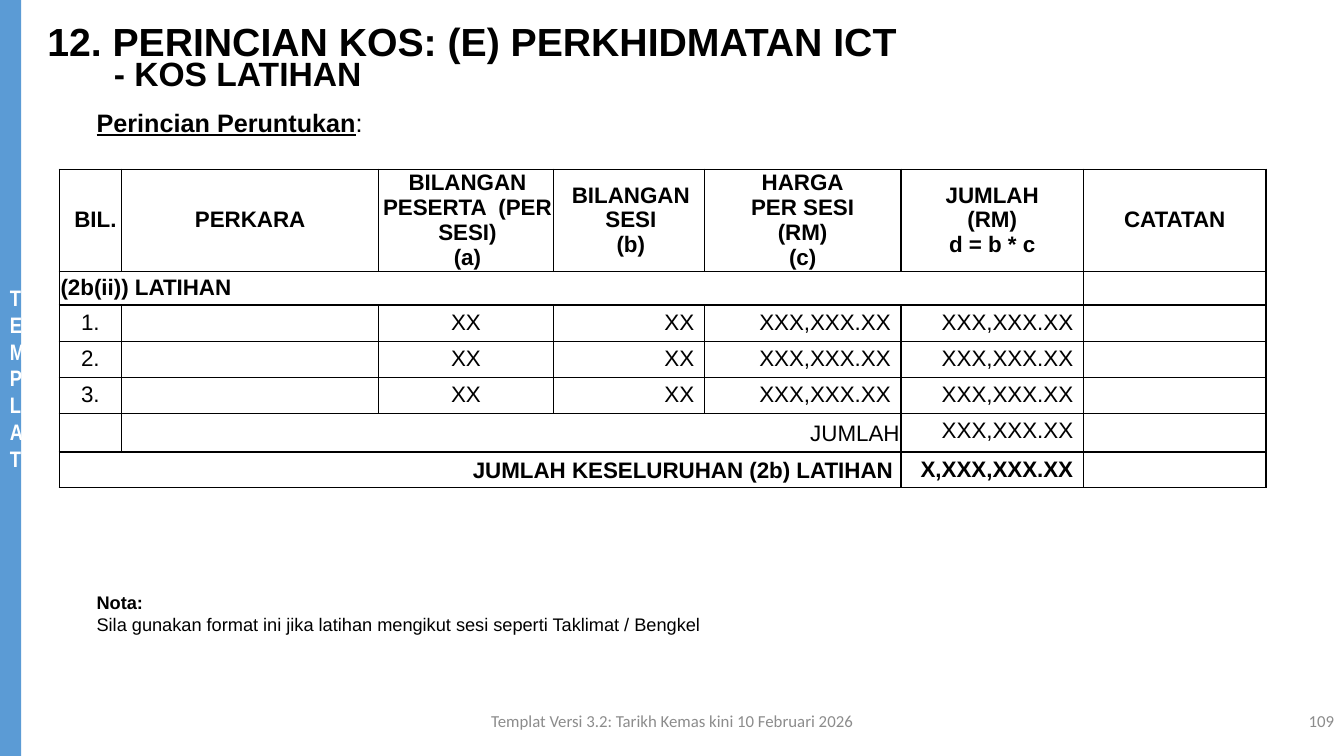
from lxml import etree
from pptx import Presentation
from pptx import util as u
from pptx.dml.color import RGBColor
from pptx.enum import shapes, text
from pptx.oxml import ns

HUES = {"bar": "5B9BD5", "ink": "000000", "pale": "FFFFFF", "grey": "8C8C8C"}
ALIGN = {"l": text.PP_ALIGN.LEFT, "c": text.PP_ALIGN.CENTER,
         "r": text.PP_ALIGN.RIGHT, "j": text.PP_ALIGN.JUSTIFY}
MID, TOP = text.MSO_ANCHOR.MIDDLE, text.MSO_ANCHOR.TOP
TIGHT, ROOMY = (1, 1, 1, 0), (7.2, 3.6, 7.2, 3.6)


def write(para, words, size=16, font="Arial", hue="ink", bold=False,
          under=False, align="l", line=None):
    para.alignment = ALIGN[align]
    if line:
        para.line_spacing = u.Pt(line)
    run = para.add_run()
    run.text = words
    run.font.size, run.font.name = u.Pt(size), font
    run.font.bold, run.font.underline = bold, under
    run.font.color.rgb = RGBColor.from_string(HUES[hue])


def fill(frame, words, **look):
    for i, part in enumerate(words.split("\n")):
        write(frame.add_paragraph() if i else frame.paragraphs[0], part, **look)


class Deck:
    def __init__(self):
        self.prs = Presentation()
        self.prs.slide_width, self.prs.slide_height = u.Inches(13.33), u.Inches(7.5)
        self.slide = self.prs.slides.add_slide(self.prs.slide_layouts[6])

    def wide(self, share):
        return int(self.prs.slide_width * share / 100)

    def high(self, share):
        return int(self.prs.slide_height * share / 100)

    def area(self, x, y, w, h):
        return self.wide(x), self.high(y), self.wide(w), self.high(h)

    def bar(self, words, *place):
        box = self.slide.shapes.add_shape(shapes.MSO_SHAPE.RECTANGLE, *self.area(*place))
        box.shadow.inherit = False
        box.fill.solid()
        box.fill.fore_color.rgb = RGBColor.from_string(HUES["bar"])
        box.line.fill.background()
        box.text_frame.word_wrap = True
        box.text_frame.vertical_anchor = MID
        write(box.text_frame.paragraphs[0], words, font="Arial Narrow",
              hue="pale", bold=True, align="c")

    def label(self, *place, words="", anchor=TOP, **look):
        frame = self.slide.shapes.add_textbox(*self.area(*place)).text_frame
        frame.word_wrap = True
        frame.vertical_anchor = anchor
        if words:
            fill(frame, words, **look)
        return frame

    def grid(self, x, y, cols, rows):
        frame = self.slide.shapes.add_table(
            len(rows), len(cols), *self.area(x, y, sum(cols), sum(rows)))
        table = frame.table
        table.first_row = table.horz_banding = False
        for col, share in zip(table.columns, cols):
            col.width = self.wide(share)
        for row, share in zip(table.rows, rows):
            row.height = self.high(share)
        for cell in table.iter_cells():
            self.edge(cell)
            cell.fill.background()
            self.pad(cell, TIGHT)
        return table

    def edge(self, cell):
        props = cell._tc.get_or_add_tcPr()
        for side in ("lnL", "lnR", "lnT", "lnB"):
            line = etree.SubElement(props, ns.qn("a:" + side), w=str(u.Pt(1)))
            paint = etree.SubElement(line, ns.qn("a:solidFill"))
            etree.SubElement(paint, ns.qn("a:srgbClr"), val=HUES["ink"])

    def pad(self, cell, sides):
        (cell.margin_left, cell.margin_top,
         cell.margin_right, cell.margin_bottom) = map(u.Pt, sides)

    def cell(self, table, row, col, words, span=1, anchor=MID, pad=TIGHT, **look):
        cell = table.cell(row, col)
        if span > 1:
            cell.merge(table.cell(row, col + span - 1))
        cell.vertical_anchor = anchor
        self.pad(cell, pad)
        fill(cell.text_frame, words, **look)


def main():
    deck = Deck()
    deck.bar("TEMPLAT", 0, 0, 1.58, 100)

    cost = deck.grid(4.4, 22.4, (4.65, 19.13, 12.98, 11.25, 14.63, 13.58, 13.58),
                     (13.47, 4.47, 4.8, 4.8, 4.8, 5.07, 4.67))
    heads = (("BIL.", 7.2), ("PERKARA", 0),
             ("BILANGAN PESERTA  (PER SESI)\n(a)", 2.2),
             ("BILANGAN SESI\n(b)", 3), ("HARGA\nPER SESI\n(RM)\n(c)", 0),
             ("JUMLAH\n(RM)\nd = b * c", 0), ("CATATAN", 0))
    for col, (head, left) in enumerate(heads):
        deck.cell(cost, 0, col, head, pad=(left, 0, 0, 0), bold=True, align="c")
    deck.cell(cost, 1, 0, "(2b(ii)) LATIHAN", span=6, bold=True, line=15.7)

    sum_look = {"anchor": TOP, "pad": ROOMY, "align": "r"}
    price = "XXX,XXX.XX"
    for num in (1, 2, 3):
        row = num + 1
        deck.cell(cost, row, 0, f"{num}.", align="c", line=15.7)
        deck.cell(cost, row, 2, "XX", anchor=TOP, pad=ROOMY, align="c")
        for col, item in enumerate(("XX", price, price), 3):
            deck.cell(cost, row, col, item, **sum_look)
    deck.cell(cost, 5, 1, "JUMLAH", span=4, align="r")
    deck.cell(cost, 5, 5, price, **sum_look)
    deck.cell(cost, 6, 0, "JUMLAH KESELURUHAN (2b) LATIHAN", span=5,
              pad=(1, 1, 5.5, 0), bold=True, align="r")
    deck.cell(cost, 6, 5, "X,XXX,XXX.XX", bold=True, **sum_look)

    note = deck.label(6.45, 77.6, 85.4, 7.2)
    write(note.paragraphs[0], "Nota:", size=13, bold=True)
    write(note.add_paragraph(),
          "Sila gunakan format ini jika latihan mengikut sesi seperti Taklimat / Bengkel",
          size=13)
    lead = deck.label(6.45, 13.5, 62.6, 5.33).paragraphs[0]
    write(lead, "Perincian Peruntukan", size=18, bold=True, under=True, align="j")
    write(lead, ":", size=18, align="j")

    deck.label(7.73, 6.4, 86.5, 10.67, words="- KOS LATIHAN", size=24, bold=True)
    deck.label(2.78, 1.6, 86.5, 7.2, words="12. PERINCIAN KOS: (E) PERKHIDMATAN ICT",
               size=28, bold=True)
    foot = {"anchor": MID, "size": 12, "font": "Calibri", "hue": "grey"}
    deck.label(77.5, 92.67, 22.5, 5.33, words="109", align="r", **foot)
    deck.label(33.15, 92.67, 33.75, 5.33, align="c",
               words="Templat Versi 3.2: Tarikh Kemas kini 10 Februari 2026", **foot)
    deck.prs.save("out.pptx")


if __name__ == "__main__":
    main()
